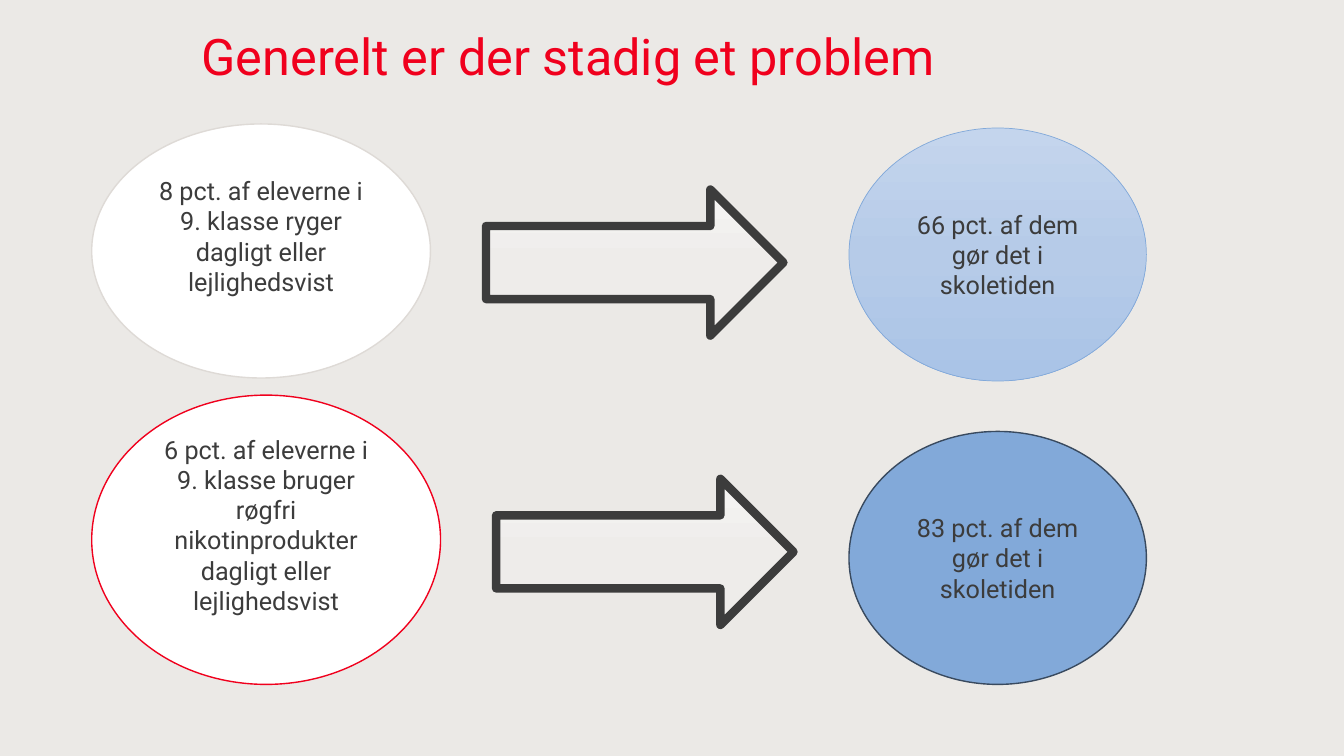
from copy import deepcopy

from pptx import Presentation
from pptx.dml.color import RGBColor
from pptx.enum.shapes import MSO_SHAPE
from pptx.enum.text import MSO_ANCHOR, PP_ALIGN
from pptx.util import Inches, Pt

FONT = "Roboto"
COLORS = {
    "background": "EBE9E6",
    "red": "F0001D",
    "text": "3C3C3C",
    "white": "FFFFFF",
    "sand": "DEDAD6",
    "blue": "82A9D9",
    "navy": "394A5F",
}
ARROW_GRADIENT = ["F6F5F4", "EEECEA", "EDEAE8"]
BLUE_GRADIENT = ["C4D5ED", "B6CBE8", "AAC4E7"]


def color(name):
    return RGBColor.from_string(COLORS[name])


def format_text(paragraph, size, color_name):
    for run in paragraph.runs:
        run.font.name = FONT
        run.font.size = Pt(size)
        run.font.color.rgb = color(color_name)


def fill_gradient(shape, stops):
    shape.fill.gradient()
    shape.fill.gradient_angle = 270
    first_stop = shape.fill.gradient_stops[0]._gs
    first_stop.addnext(deepcopy(first_stop))
    for index, (stop, value) in enumerate(zip(shape.fill.gradient_stops, stops)):
        stop.position = index / (len(stops) - 1)
        stop.color.rgb = RGBColor.from_string(value)


def add_shape(slide, kind, box, fill, line, line_width):
    shape = slide.shapes.add_shape(kind, *(Inches(length) for length in box))
    shape.shadow.inherit = False
    if isinstance(fill, list):
        fill_gradient(shape, fill)
    else:
        shape.fill.solid()
        shape.fill.fore_color.rgb = color(fill)
    shape.line.color.rgb = color(line)
    shape.line.width = Pt(line_width)
    return shape


def add_ellipse(slide, box, text, fill, line, line_width=1, bottom_margin=0.05):
    shape = add_shape(slide, MSO_SHAPE.OVAL, box, fill, line, line_width)
    text_frame = shape.text_frame
    text_frame.word_wrap = True
    text_frame.vertical_anchor = MSO_ANCHOR.MIDDLE
    text_frame.margin_bottom = Inches(bottom_margin)
    text_frame.text = text
    paragraph = text_frame.paragraphs[0]
    paragraph.alignment = PP_ALIGN.CENTER
    format_text(paragraph, 18, "text")


def add_arrow(slide, left, top):
    box = (left, top, 2.95, 1.45)
    add_shape(slide, MSO_SHAPE.RIGHT_ARROW, box, ARROW_GRADIENT, "text", 6)


def set_title(slide, text):
    title = slide.shapes.title
    title.left, title.top = Inches(2), Inches(0.32)
    title.width, title.height = Inches(9.38), Inches(0.69)
    text_frame = title.text_frame
    text_frame.margin_left = text_frame.margin_right = 0
    text_frame.margin_top = text_frame.margin_bottom = 0
    text_frame.vertical_anchor = MSO_ANCHOR.TOP
    text_frame.word_wrap = True
    text_frame.text = text
    paragraph = text_frame.paragraphs[0]
    paragraph.alignment = PP_ALIGN.LEFT
    paragraph.line_spacing = 0.9
    format_text(paragraph, 36, "red")


def main():
    presentation = Presentation()
    presentation.slide_width = Inches(13.33)
    presentation.slide_height = Inches(7.5)
    slide = presentation.slides.add_slide(presentation.slide_layouts[5])
    slide.background.fill.solid()
    slide.background.fill.fore_color.rgb = color("background")

    set_title(slide, "Generelt er der stadig et problem")

    add_ellipse(slide, (0.91, 1.23, 3.36, 2.52),
                "8 pct. af eleverne i 9. klasse ryger dagligt eller lejlighedsvist",
                "white", "sand", bottom_margin=0.35)
    add_arrow(slide, 4.82, 1.88)
    add_ellipse(slide, (8.42, 1.27, 2.95, 2.51),
                "66 pct. af dem gør det i skoletiden",
                BLUE_GRADIENT, "blue", line_width=0.5)

    add_ellipse(slide, (0.91, 3.92, 3.46, 2.87),
                "6 pct. af eleverne i 9. klasse bruger røgfri nikotinprodukter "
                "dagligt eller lejlighedsvist",
                "white", "red", bottom_margin=0.35)
    add_arrow(slide, 4.92, 4.75)
    add_ellipse(slide, (8.42, 4.28, 2.95, 2.51),
                "83 pct. af dem gør det i skoletiden", "blue", "navy")

    presentation.save("out.pptx")


if __name__ == "__main__":
    main()
